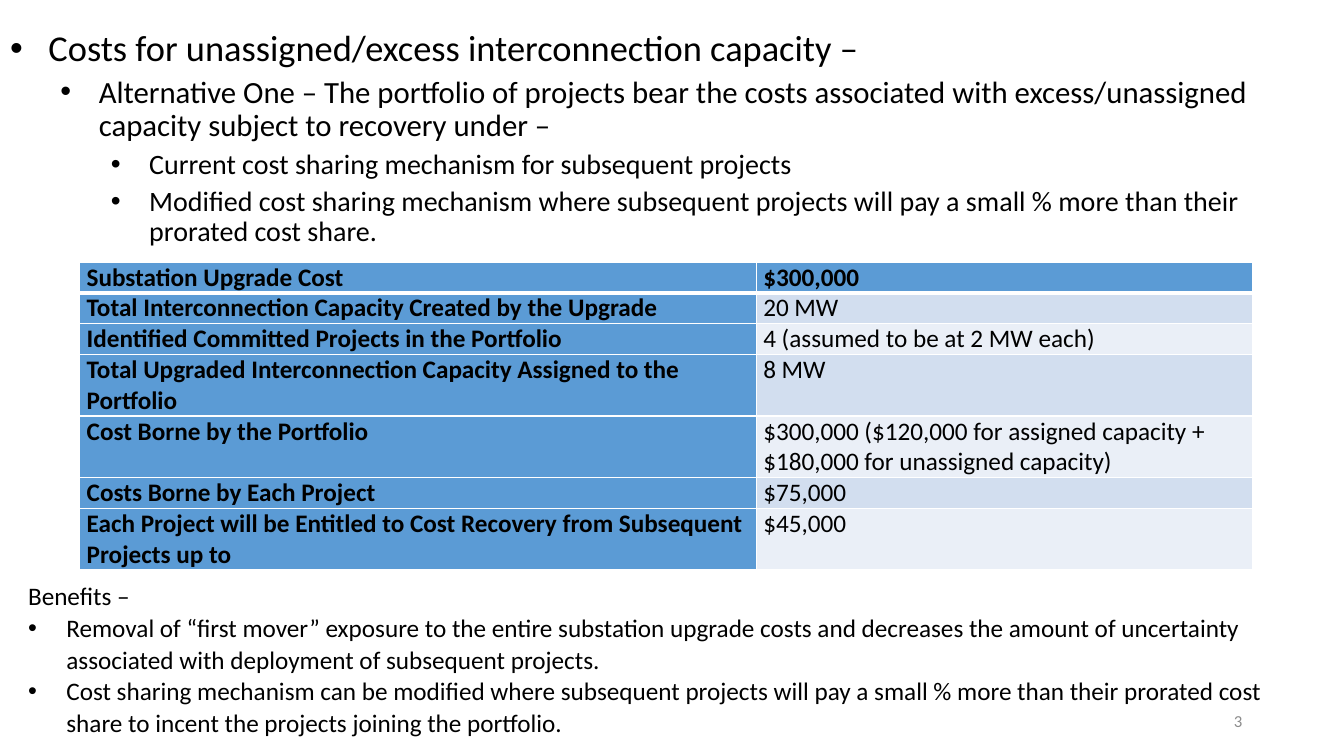
from lxml.etree import SubElement
from pptx import Presentation
from pptx.dml.color import RGBColor
from pptx.enum.text import MSO_ANCHOR as ANCHOR, MSO_AUTO_SIZE as AUTO, PP_ALIGN as ALIGN
from pptx.oxml.ns import qn
from pptx.util import Emu, Inches, Pt

FONT = "Calibri"
BLACK, WHITE, GREY = "000000", "FFFFFF", "8C8C8C"
BLUE, BANDS = "5B9BD5", ("D2DEEF", "EAEFF7")
HANG = 0.38

OUTLINE = [
    (0, 26, "Costs for unassigned/excess interconnection capacity –"),
    (1, 22, "Alternative One – The portfolio of projects bear the costs associated with "
            "excess/unassigned capacity subject to recovery under –"),
    (2, 20, "Current cost sharing mechanism for subsequent projects"),
    (2, 20, "Modified cost sharing mechanism where subsequent projects will pay a small % "
            "more than their prorated cost share."),
]
COSTS = [
    ("Substation Upgrade Cost", "$300,000", 1),
    ("Total Interconnection Capacity Created by the Upgrade", "20 MW", 1),
    ("Identified Committed Projects in the Portfolio", "4 (assumed to be at 2 MW each)", 1),
    ("Total Upgraded Interconnection Capacity Assigned to the Portfolio", "8 MW", 2),
    ("Cost Borne by the Portfolio",
     "$300,000 ($120,000 for assigned capacity + $180,000 for unassigned capacity)", 2),
    ("Costs Borne by Each Project", "$75,000", 1),
    ("Each Project will be Entitled to Cost Recovery from Subsequent Projects up to",
     "$45,000", 2),
]
BENEFITS = [
    "Removal of “first mover” exposure to the entire substation upgrade costs and decreases "
    "the amount of uncertainty associated with deployment of subsequent projects.",
    "Cost sharing mechanism can be modified where subsequent projects will pay a small % more "
    "than their prorated cost share to incent the projects joining the portfolio.",
]


def rgb(color):
    return RGBColor.from_string(color)


def write(tf, text, size=18, color=BLACK, bold=False, align=ALIGN.LEFT, level=None,
          spacing=1.0, before=0, after=0):
    """Add a paragraph, or fill the first one; a level makes it a bullet."""
    p = tf.paragraphs[0] if not tf.text else tf.add_paragraph()
    p.alignment, p.line_spacing = align, spacing
    p.space_before, p.space_after = Pt(before), Pt(after)
    if level is not None:
        p.level = level
        pPr = p._p.get_or_add_pPr()
        pPr.set("marL", str(Inches(HANG + level * 0.5)))
        pPr.set("indent", str(-Inches(HANG)))
        SubElement(pPr, qn("a:buFont"), typeface="Arial")
        SubElement(pPr, qn("a:buChar"), char="•")
    r = p.add_run()
    r.text = text
    r.font.name, r.font.size, r.font.bold = FONT, Pt(size), bold
    r.font.color.rgb = rgb(color)


def text_box(slide, box, anchor=ANCHOR.TOP):
    tf = slide.shapes.add_textbox(*map(Inches, box)).text_frame
    tf.word_wrap, tf.vertical_anchor = True, anchor
    return tf


def outline(slide, box):
    body = slide.placeholders[1]
    body.left, body.top, body.width, body.height = map(Inches, box)
    tf = body.text_frame
    tf.auto_size = AUTO.NONE
    for level, size, text in OUTLINE:
        write(tf, text, size=size, level=level, spacing=0.9, before=5 if level else 10)


def add_borders(cell, bottom):
    """Draw white cell edges; call before the fill is set."""
    tcPr = cell._tc.get_or_add_tcPr()
    for side, width in (("L", 1), ("R", 1), ("T", 1), ("B", bottom)):
        ln = SubElement(tcPr, qn(f"a:ln{side}"), w=str(Pt(width)))
        SubElement(SubElement(ln, qn("a:solidFill")), qn("a:srgbClr"), val=WHITE)


def cost_table(slide, box):
    x, y, w, h = map(Inches, box)
    table = slide.shapes.add_table(len(COSTS), 2, x, y, w, h).table
    label_width = int(w * 0.577)
    table.columns[0].width, table.columns[1].width = Emu(label_width), Emu(w - label_width)
    line = h / sum(lines for *_, lines in COSTS)
    for i, (*texts, lines) in enumerate(COSTS):
        table.rows[i].height = Emu(int(line * lines))
        for j, text in enumerate(texts):
            cell = table.cell(i, j)
            heading = i == 0 or j == 0
            add_borders(cell, bottom=3 if i == 0 else 1)
            cell.fill.solid()
            cell.fill.fore_color.rgb = rgb(BLUE if heading else BANDS[(i - 1) % 2])
            cell.margin_left = cell.margin_right = Inches(0.07)
            cell.margin_top = cell.margin_bottom = 0
            write(cell.text_frame, text, bold=heading)


def benefits(slide, box):
    tf = text_box(slide, box)
    write(tf, "Benefits –")
    for i, text in enumerate(BENEFITS):
        write(tf, text, level=0, spacing=1.05, after=8 if i == len(BENEFITS) - 1 else 0)


def page_number(slide, box):
    write(text_box(slide, box, ANCHOR.MIDDLE), "3", size=12, color=GREY, align=ALIGN.RIGHT)


def main():
    prs = Presentation()
    prs.slide_width, prs.slide_height = Inches(13.33), Inches(7.5)
    slide = prs.slides.add_slide(prs.slide_layouts[1])
    title = slide.shapes.title._element
    title.getparent().remove(title)
    outline(slide, (0, 0.25, 13.03, 5.93))
    cost_table(slide, (0.79, 2.6, 11.63, 3))
    benefits(slide, (0.18, 5.71, 12.85, 1.68))
    page_number(slide, (9.42, 6.95, 3, 0.4))
    prs.save("out.pptx")


if __name__ == "__main__":
    main()
